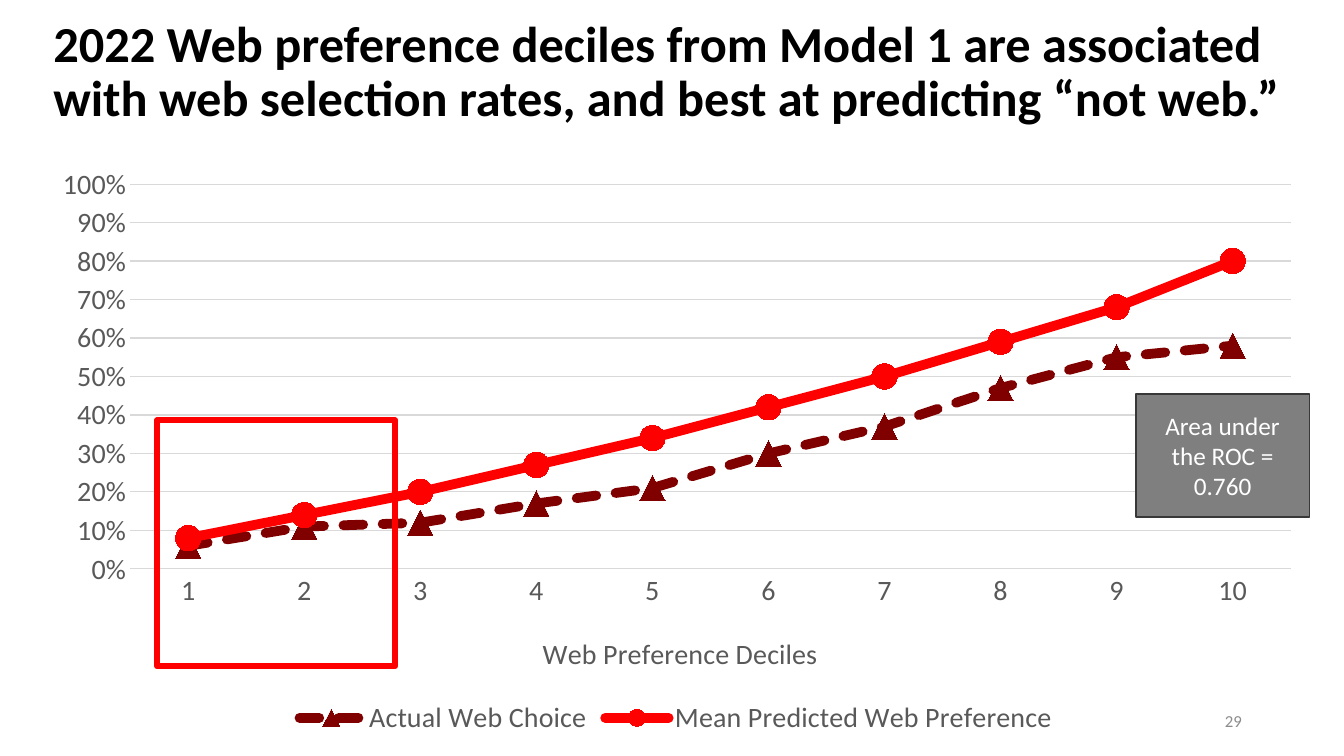
from lxml import etree
from pptx import Presentation
from pptx.chart.data import CategoryChartData
from pptx.dml.color import RGBColor
from pptx.enum import chart as ch, dml, shapes, text
from pptx.oxml.ns import qn
from pptx.util import Pt

# Content
TITLE = ("2022 Web preference deciles from Model 1 are associated "
         "with web selection rates, and best at predicting “not web.”")
AXIS = "Web Preference Deciles"
NOTE = "Area under the ROC = 0.760"
PAGE = "29"
DECILES = [str(n) for n in range(1, 11)]
SERIES = [
    ("Actual Web Choice", "maroon", "TRIANGLE", True,
     (0.06, 0.11, 0.12, 0.17, 0.21, 0.3, 0.37, 0.47, 0.55, 0.58)),
    ("Mean Predicted Web Preference", "red", "CIRCLE", False,
     (0.08, 0.14, 0.2, 0.27, 0.34, 0.42, 0.5, 0.59, 0.68, 0.8)),
]

# Theme and places (left, top, width, height in points)
THEME = {
    "font": "Calibri",
    "black": "000000", "white": "FFFFFF", "maroon": "800000", "red": "FF0000",
    "label": "595959", "grid": "D9D9D9", "page": "8C8C8C",
    "box": "7F7F7F", "edge": "383838",
    "head": 36, "chart": 20, "note": 18, "small": 12,
}
PLACE = {
    "title": (31, 0, 921.6, 104.4),
    "chart": (25.2, 110.9, 915.1, 418.3),
    "page": (678.2, 500.4, 216, 28.8),
    "note": (811.4, 281.5, 123.8, 87.8),
    "focus": (112.3, 300.2, 169.9, 175.7),
}
PLOT = (93, 131.5, 829, 275)
LABEL = (384, 449)


def color(name):
    return RGBColor.from_string(THEME[name])


def place(name):
    return [Pt(v) for v in PLACE[name]]


def style(font, size, name, bold=False):
    font.name, font.size, font.bold = THEME["font"], Pt(THEME[size]), bold
    font.color.rgb = color(name)


def write(shape, words, size, name, align, bold=False, space=1.0):
    frame = shape.text_frame
    frame.word_wrap = True
    frame.vertical_anchor = text.MSO_ANCHOR.MIDDLE
    para = frame.paragraphs[0]
    para.alignment, para.line_spacing = align, space
    run = para.add_run()
    run.text = words
    style(run.font, size, name, bold)


def rect(name, edge, width, fill=None):
    shape = slide.shapes.add_shape(shapes.MSO_SHAPE.RECTANGLE, *place(name))
    shape.shadow.inherit = False
    if fill:
        shape.fill.solid()
        shape.fill.fore_color.rgb = color(fill)
    else:
        shape.fill.background()
    shape.line.color.rgb, shape.line.width = color(edge), Pt(width)
    return shape


def fix(parent, index, spot, inner=False):
    """Pin a chart part at a spot given in slide points."""
    for old in parent.findall(qn("c:layout")):
        parent.remove(old)
    layout = etree.Element(qn("c:layout"))
    parent.insert(index, layout)
    manual = etree.SubElement(layout, qn("c:manualLayout"))
    left, top, wide, high = PLACE["chart"]
    ratios = [(spot[0] - left) / wide, (spot[1] - top) / high]
    ratios += [v / side for v, side in zip(spot[2:], (wide, high))]
    pairs = [("layoutTarget", "inner")] if inner else []
    pairs += [("xMode", "edge"), ("yMode", "edge")]
    pairs += [(k, f"{v:.4f}") for k, v in zip("xywh", ratios)]
    for key, value in pairs:
        etree.SubElement(manual, qn("c:" + key)).set("val", value)


deck = Presentation()
deck.slide_width, deck.slide_height = Pt(960), Pt(540)
slide = deck.slides.add_slide(deck.slide_layouts[6])

# Title
write(slide.shapes.add_textbox(*place("title")), TITLE, "head", "black",
      text.PP_ALIGN.LEFT, True, 0.9)

# Chart
data = CategoryChartData(number_format="0%")
data.categories = DECILES
for name, *_, values in SERIES:
    data.add_series(name, values)
chart = slide.shapes.add_chart(ch.XL_CHART_TYPE.LINE_MARKERS,
                               *place("chart"), data).chart
style(chart.font, "chart", "label")
chart.has_title = False
chart.has_legend = True
chart.legend.position = ch.XL_LEGEND_POSITION.BOTTOM
chart.legend.include_in_layout = False
style(chart.legend.font, "chart", "label")
plot = chart.plots[0]
plot.vary_by_categories = False

for line, (_, tone, mark, dashed, _) in zip(plot.series, SERIES):
    line.smooth = False
    line.format.line.color.rgb = color(tone)
    line.format.line.width = Pt(7)
    if dashed:
        line.format.line.dash_style = dml.MSO_LINE.SQUARE_DOT
    line.format.line._ln.set("cap", "rnd")
    line.marker.style = ch.XL_MARKER_STYLE[mark]
    line.marker.size = 18
    line.marker.format.fill.solid()
    line.marker.format.fill.fore_color.rgb = color(tone)
    line.marker.format.line.color.rgb = color(tone)

# Axes
cat, val = chart.category_axis, chart.value_axis
for axis in (cat, val):
    axis.major_tick_mark = axis.minor_tick_mark = ch.XL_TICK_MARK.NONE
    style(axis.tick_labels.font, "chart", "label")
val.minimum_scale, val.maximum_scale, val.major_unit = 0, 1, 0.1
val.tick_labels.number_format = "0%"
val.tick_labels.number_format_is_linked = False
val.format.line.fill.background()
for rule in (cat.format.line, val.major_gridlines.format.line):
    rule.color.rgb, rule.width = color("grid"), Pt(0.75)
run = cat.axis_title.text_frame.paragraphs[0].add_run()
run.text = AXIS
style(run.font, "chart", "label")
fix(cat.axis_title._element, 1, LABEL)
fix(chart._chartSpace.chart.plotArea, 0, PLOT, True)

# Page number, note and focus frame
write(slide.shapes.add_textbox(*place("page")), PAGE, "small", "page",
      text.PP_ALIGN.RIGHT)
write(rect("note", "edge", 1, "box"), NOTE, "note", "white",
      text.PP_ALIGN.CENTER)
rect("focus", "red", 4.5)

deck.save("out.pptx")
